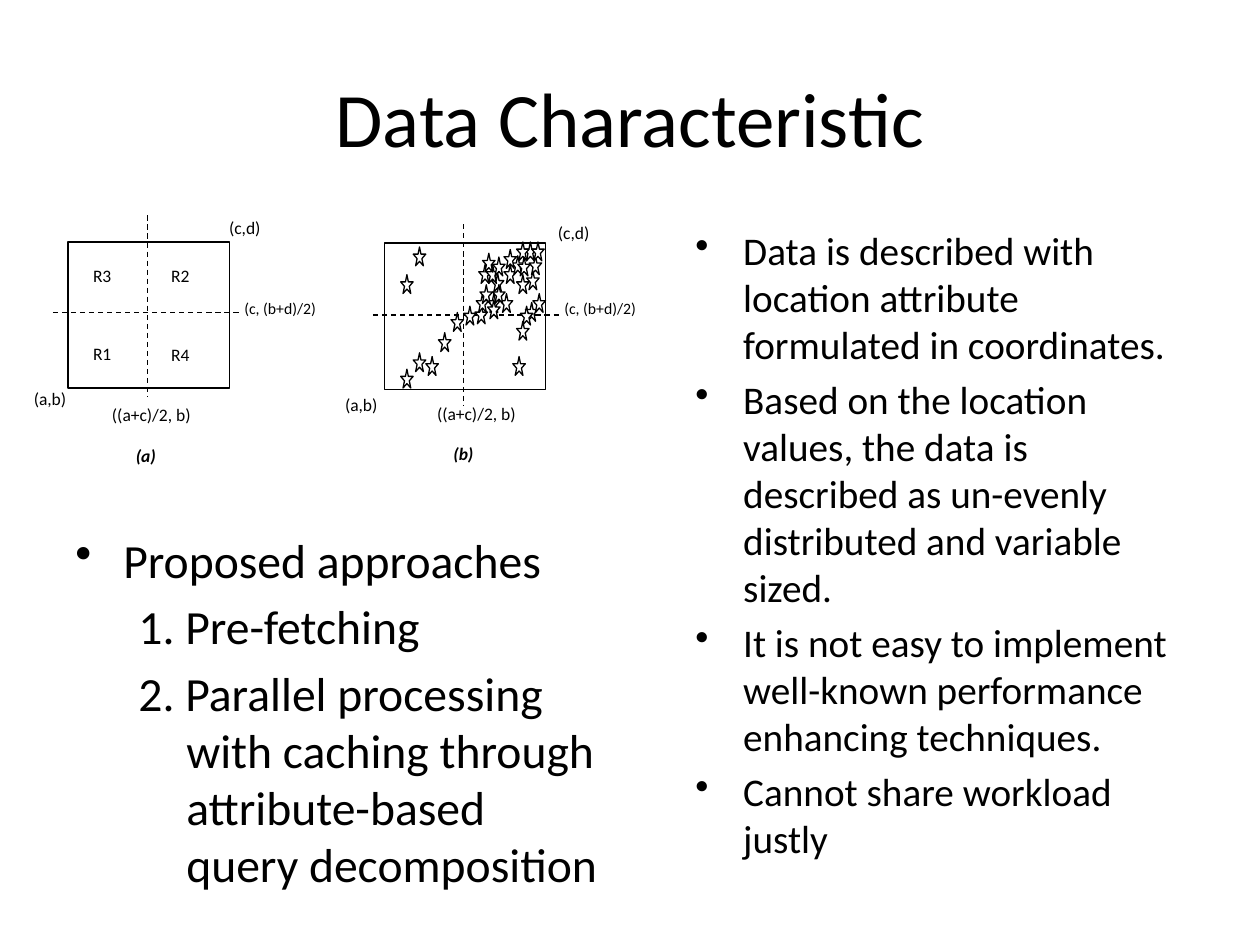
from pptx import Presentation
from pptx.dml.color import RGBColor
from pptx.enum.dml import MSO_LINE
from pptx.enum.shapes import MSO_CONNECTOR, MSO_SHAPE
from pptx.enum.text import MSO_ANCHOR, PP_ALIGN
from pptx.oxml.ns import qn
from pptx.util import Inches, Pt
from lxml.etree import SubElement

COLORS = {"ink": "000000", "paper": "FFFFFF"}
INK, PAPER = (RGBColor.from_string(COLORS[key]) for key in ("ink", "paper"))
SQUARE_W, SQUARE_H = 1.28, 1.16
STAR_W, STAR_H = 0.1, 0.15

deck = Presentation()
deck.slide_width, deck.slide_height = Inches(10), Inches(7.5)
slide = deck.slides.add_slide(deck.slide_layouts[6])


def add_outlined(preset, left, top, width, height):
    """Add a white preset shape with a thin black outline."""
    shape = slide.shapes.add_shape(preset, Inches(left), Inches(top), Inches(width), Inches(height))
    shape.shadow.inherit = False
    shape.fill.solid()
    shape.fill.fore_color.rgb = PAPER
    shape.line.color.rgb = INK
    shape.line.width = Pt(0.75)


def add_text(left, top, width, height, lines, size):
    """Add a wrapping text box with one paragraph per line and return it."""
    box = slide.shapes.add_textbox(Inches(left), Inches(top), Inches(width), Inches(height))
    box.text_frame.word_wrap = True
    box.text_frame.text = "\n".join(lines)
    for paragraph in box.text_frame.paragraphs:
        paragraph.font.name = "Calibri"
        paragraph.font.size = Pt(size)
        paragraph.font.color.rgb = INK
    return box


title = add_text(0.5, 0.3, 9, 1.25, ["Data Characteristic"], 44)
title.text_frame.vertical_anchor = MSO_ANCHOR.MIDDLE
title.text_frame.paragraphs[0].alignment = PP_ALIGN.CENTER

characteristics = add_text(5.42, 1.75, 4.08, 5.25, [
    "Data is described with location attribute formulated in coordinates.",
    "Based on the location values, the data is described as un-evenly distributed and variable sized.",
    "It is not easy to implement well-known performance enhancing techniques.",
    "Cannot share workload justly",
], 22.4)

# Squares of both diagrams, then the stars that lie beneath the dashed axes
for left, top in [(0.54, 1.92), (3.05, 1.93)]:
    add_outlined(MSO_SHAPE.RECTANGLE, left, top, SQUARE_W, SQUARE_H)

stars_below = [
    (3.28, 1.96), (4.1, 2.18), (4, 2.1), (3.58, 2.48), (4.1, 2.55), (4.17, 2.4),
    (4.2, 2.03), (3.48, 2.64), (4.06, 2.03), (3.8, 2.1), (3.38, 2.83), (4.07, 2.83),
    (4.16, 1.92), (4.22, 1.92), (3.18, 2.18),
]
stars_above = [
    (3.87, 2.33), (3.87, 2.38), (3.18, 2.93), (4.1, 1.92), (4, 1.98), (4.11, 2.04),
    (4.18, 2.15), (3.9, 2.17), (3.86, 2.1), (3.91, 2.04), (3.28, 2.8), (4.13, 2.43),
    (4.23, 2.33), (3.68, 2.43), (3.77, 2.42), (3.78, 2.33), (3.81, 2.26), (3.97, 2.33),
    (3.91, 2.26), (3.83, 2.01),
]
for left, top in stars_below:
    add_outlined(MSO_SHAPE.STAR_5_POINT, left, top, STAR_W, STAR_H)

for x1, y1, x2, y2 in [
    (1.17, 1.71, 1.17, 3.15), (0.42, 2.48, 1.92, 2.48),
    (3.68, 1.78, 3.68, 3.22), (2.96, 2.5, 4.46, 2.5),
]:
    axis = slide.shapes.add_connector(
        MSO_CONNECTOR.STRAIGHT, Inches(x1), Inches(y1), Inches(x2), Inches(y2))
    axis.line.color.rgb = INK
    axis.line.width = Pt(0.75)
    axis.line.dash_style = MSO_LINE.DASH
    SubElement(axis._element.spPr, qn("a:effectLst"))

for left, top in stars_above:
    add_outlined(MSO_SHAPE.STAR_5_POINT, left, top, STAR_W, STAR_H)

# Region names, on white so that they stay readable
for region, left, top in [("R1", 0.64, 2.67), ("R2", 1.26, 2.05), ("R3", 0.64, 2.05), ("R4", 1.26, 2.68)]:
    region_label = add_text(left, top, 0.4, 0.28, [region], 10)
    region_label.fill.solid()
    region_label.fill.fore_color.rgb = PAPER

for coordinate, left, top, width, height, size in [
    ("(c,d)", 1.72, 1.67, 0.54, 0.32, 10),
    ("(a,b)", 0.17, 3.03, 0.54, 0.32, 10),
    ("((a+c)/2, b)", 0.79, 3.16, 1.01, 0.39, 10),
    ("(c, (b+d)/2)", 1.84, 2.32, 0.95, 0.39, 9),
    ("(c,d)", 4.33, 1.71, 0.54, 0.32, 10),
    ("(a,b)", 2.64, 3.08, 0.54, 0.32, 10),
    ("((a+c)/2, b)", 3.37, 3.15, 1.01, 0.39, 10),
    ("(c, (b+d)/2)", 4.38, 2.32, 0.95, 0.39, 9),
]:
    add_text(left, top, width, height, [coordinate], size)

for caption, left, top in [("(a)", 0.98, 3.48), ("(b)", 3.5, 3.47)]:
    caption_font = add_text(left, top, 0.44, 0.32, [caption], 10).text_frame.paragraphs[0].font
    caption_font.bold = caption_font.italic = True

approaches = add_text(0.5, 4.25, 4.42, 2.67, [
    "Proposed approaches",
    "1. Pre-fetching",
    "2. Parallel processing with caching through attribute-based query decomposition",
], 27.2)
heading, *steps = approaches.text_frame.paragraphs
heading.line_spacing = 0.8
for step in steps:
    step.level = 1

# Hanging indents for both lists, bullets on the first level only
for paragraph in [*characteristics.text_frame.paragraphs, heading, *steps]:
    paragraph.space_before = Pt(0.2 * paragraph.font.size.pt)
    properties = paragraph._p.get_or_add_pPr()
    properties.set("marL", str(Inches(0.38 + 0.5 * paragraph.level)))
    properties.set("indent", str(Inches(-0.38)))
    if paragraph.level == 0:
        bullet = properties.makeelement(qn("a:buChar"), {"char": "•"})
        properties.find(qn("a:defRPr")).addprevious(bullet)

deck.save("out.pptx")
